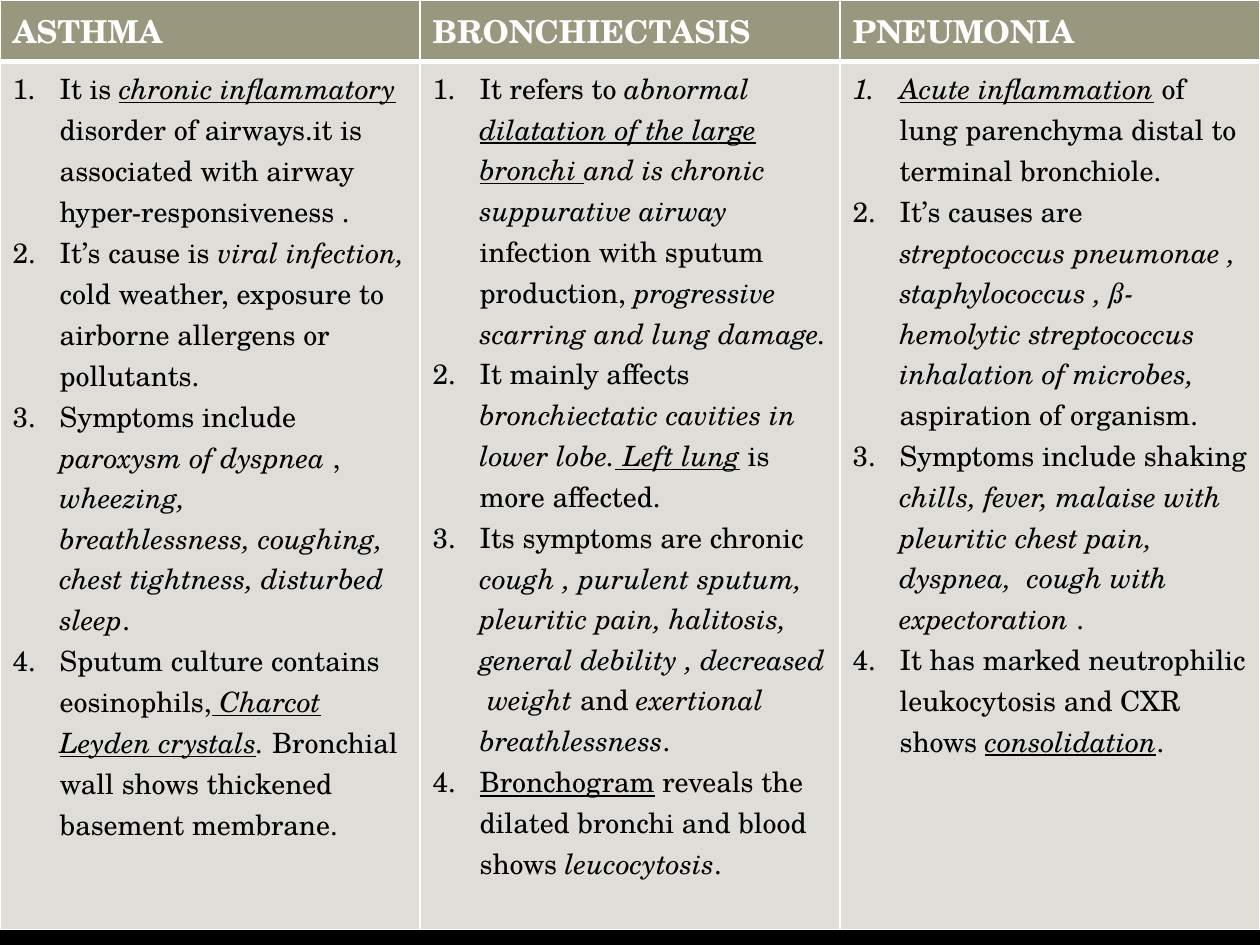
from lxml import etree
from pptx import Presentation
from pptx.dml.color import RGBColor
from pptx.oxml.ns import qn
from pptx.util import Cm, Pt

FONT = "TeX Gyre Schola"
HEADER_FILL, BODY_FILL, WHITE, BLACK = "99987F", "DEDDD8", "FFFFFF", "000000"

# Each item is a list of (text, style) runs; style holds "i" (italic) and "u" (underline).
DISEASES = {
    "ASTHMA": [
        [("It is ", ""), ("chronic inflammatory", "iu"),
         (" disorder of airways.it is associated with airway hyper-responsiveness .", "")],
        [("It’s cause is ", ""), ("viral infection,", "i"),
         (" cold weather, exposure to airborne allergens or pollutants.", "")],
        [("Symptoms include ", ""), ("paroxysm of dyspnea ", "i"), (", ", ""),
         ("wheezing,\nbreathlessness, coughing, chest tightness, disturbed sleep", "i"),
         (".", "")],
        [("Sputum culture contains eosinophils,", ""), (" Charcot", "iu"), (" ", "u"),
         ("Leyden crystals", "iu"), (".", "i"),
         (" Bronchial wall shows thickened basement membrane.", "")],
    ],
    "BRONCHIECTASIS": [
        [("It refers to ", ""), ("abnormal ", "i"),
         ("dilatation of the large bronchi ", "iu"),
         ("and is chronic suppurative airway", "i"),
         (" infection with sputum production, ", ""),
         ("progressive scarring and lung damage.", "i")],
        [("It mainly affects ", ""), ("bronchiectatic cavities in lower lobe.", "i"),
         (" Left lung", "iu"), (" is more affected.", "")],
        [("Its symptoms are chronic ", ""),
         ("cough , purulent sputum, pleuritic pain, halitosis, "
          "general debility , decreased  weight ", "i"),
         ("and", ""), (" exertional breathlessness", "i"), (".", "")],
        [("Bronchogram", "u"), (" reveals the dilated bronchi and blood shows", ""),
         (" leucocytosis", "i"), (".", "")],
    ],
    "PNEUMONIA": [
        [("Acute inflammation", "iu"),
         (" of lung parenchyma distal to terminal bronchiole.", "")],
        [("It’s causes are ", ""),
         ("streptococcus pneumonae , staphylococcus , ß- hemolytic streptococcus "
          "inhalation of microbes,", "i"),
         (" aspiration of organism.", "")],
        [("Symptoms include shaking ", ""),
         ("chills, fever, malaise with pleuritic chest pain, dyspnea,  "
          "cough with expectoration ", "i"), (".", "")],
        [("It has marked neutrophilic leukocytosis and CXR shows ", ""),
         ("consolidation", "iu"), (".", "")],
    ],
}


def paint(fill, color):
    """Make a fill solid in the given hex colour."""
    fill.solid()
    fill.fore_color.rgb = RGBColor.from_string(color)


def add_run(p, content, size, color, style="", bold=False):
    """Add formatted text to a paragraph, turning newlines into line breaks."""
    for i, line in enumerate(content.split("\n")):
        if i:
            p.add_line_break()
        r = p.add_run()
        r.text = line
        font = r.font
        font.name, font.size, font.bold = FONT, Pt(size), bold
        font.italic, font.underline = "i" in style, "u" in style
        paint(font.fill, color)


def number(p):
    """Give a paragraph an automatic number with a hanging indent."""
    pPr = p._p.get_or_add_pPr()
    pPr.set("marL", str(Cm(0.95)))
    pPr.set("indent", str(-Cm(0.95)))
    etree.SubElement(pPr, qn("a:buFont"), typeface="+mj-lt")
    etree.SubElement(pPr, qn("a:buAutoNum"), type="arabicPeriod")


def style_cell(cell, fill, top=1, bottom=1):
    """Fill a cell and draw its white borders, widths in points."""
    paint(cell.fill, fill)
    tcPr = cell._tc.get_or_add_tcPr()
    widths = {"L": 1, "R": 1, "T": top, "B": bottom}
    for i, (side, width) in enumerate(widths.items()):
        ln = etree.Element(qn(f"a:ln{side}"), w=str(Pt(width)))
        solid = etree.SubElement(ln, qn("a:solidFill"))
        etree.SubElement(solid, qn("a:srgbClr"), val=WHITE)
        tcPr.insert(i, ln)


def fill_header(cell, name):
    """Write a disease name in a header cell."""
    style_cell(cell, HEADER_FILL, bottom=3)
    add_run(cell.text_frame.paragraphs[0], name, 18, WHITE, bold=True)


def fill_body(cell, items):
    """Write a numbered list in a body cell."""
    style_cell(cell, BODY_FILL, top=3)
    tf = cell.text_frame
    for i, runs in enumerate(items):
        p = tf.add_paragraph() if i else tf.paragraphs[0]
        number(p)
        for content, style in runs:
            add_run(p, content, 16, BLACK, style)


def main():
    """Build the comparison slide."""
    prs = Presentation()
    prs.slide_width, prs.slide_height = Cm(25.4), Cm(19.05)
    s = prs.slides.add_slide(prs.slide_layouts[6])
    paint(s.background.fill, BLACK)
    table = s.shapes.add_table(2, len(DISEASES), 0, 0, prs.slide_width, Cm(18.41)).table
    table.rows[0].height, table.rows[1].height = Cm(0.91), Cm(17.5)
    for col, (name, items) in enumerate(DISEASES.items()):
        fill_header(table.cell(0, col), name)
        fill_body(table.cell(1, col), items)
    prs.save("out.pptx")


if __name__ == "__main__":
    main()
